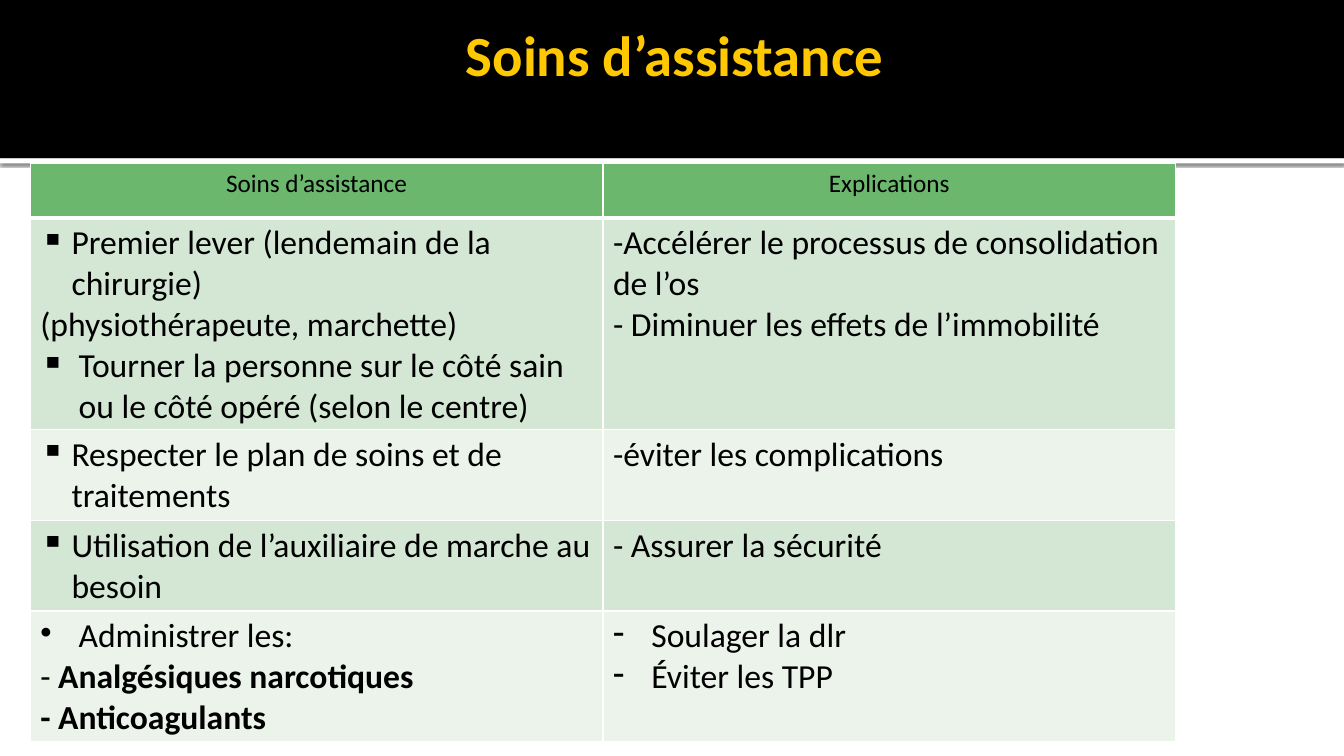
"""Build the slide "Soins d’assistance": a black title band above a care table."""
from lxml import etree
from pptx import Presentation
from pptx.dml.color import RGBColor
from pptx.enum.shapes import MSO_SHAPE
from pptx.enum.text import MSO_ANCHOR, PP_ALIGN
from pptx.oxml import parse_xml
from pptx.oxml.ns import qn
from pptx.util import Inches, Pt

RECTANGLE = MSO_SHAPE.RECTANGLE
TOP = MSO_ANCHOR.TOP
CENTER = PP_ALIGN.CENTER
NAMESPACE = 'xmlns:a="http://schemas.openxmlformats.org/drawingml/2006/main"'
SHADOW = (f'<a:effectLst {NAMESPACE}><a:outerShdw blurRad="31750" dist="10160" dir="5400000">'
          '<a:srgbClr val="000000"><a:alpha val="60000"/></a:srgbClr></a:outerShdw></a:effectLst>')
BAND_HEIGHT = 1.57
STRIP_HEIGHT = 0.05
TABLE_LEFT = 0.3
TABLE_HEIGHT = 5.74
COLUMN_WIDTH = 5.68
ROW_HEIGHTS = [0.54, 0.88, 0.79, 0.85, 0.51]
HEADER_FILL = "6BB76D"
BODY_FILLS = ["D4E6D4", "EBF3EB"]


def color(value):
    """Turn a hex string into a colour."""
    return RGBColor.from_string(value)


def add_run(paragraph, text, size, value, bold=False):
    """Append one styled run."""
    run = paragraph.add_run()
    run.text = text
    run.font.name = "Calibri"
    run.font.size = Pt(size)
    run.font.bold = bold
    run.font.color.rgb = color(value)


presentation = Presentation()
presentation.slide_width = Inches(13.33)
presentation.slide_height = Inches(7.5)
slide = presentation.slides.add_slide(presentation.slide_layouts[6])

for top, height, fill in [(BAND_HEIGHT, STRIP_HEIGHT, "FFFFFF"), (0, BAND_HEIGHT, "000000")]:
    band = slide.shapes.add_shape(RECTANGLE, 0, Inches(top), presentation.slide_width, Inches(height))
    band.shadow.inherit = False
    band.fill.solid()
    band.fill.fore_color.rgb = color(fill)
    band.line.fill.background()
    if top:
        properties = band._element.spPr
        properties.replace(properties.find(qn("a:effectLst")), parse_xml(SHADOW))

title = slide.shapes.add_textbox(Inches(0.67), Inches(0.17), Inches(12), Inches(1.37))
frame = title.text_frame
frame.word_wrap = True
frame.vertical_anchor = TOP
frame.margin_left = Inches(0.1)
frame.margin_right = Inches(0.05)
frame.margin_top = Inches(0.03)
frame.paragraphs[0].alignment = CENTER
add_run(frame.paragraphs[0], "Soins d’assistance", 40.5, "FFC800", True)

rows = [
    [[("", 0, [("Soins d’assistance", False)])],
     [("", 0, [("Explications", False)])]],
    [[("▪", 0.31, [("Premier lever (lendemain de la chirurgie)", False)]),
      ("", 0, [("(physiothérapeute, marchette)", False)]),
      ("▪", 0.38, [("Tourner la personne sur le côté sain ou le côté opéré (selon le centre)", False)])],
     [("", 0, [("-Accélérer le processus de consolidation de l’os", False)]),
      ("", 0, [("- Diminuer les effets de l’immobilité", False)])]],
    [[("▪", 0.31, [("Respecter le plan de soins et de traitements", False)])],
     [("", 0, [("-éviter les complications", False)])]],
    [[("▪", 0.31, [("Utilisation de l’auxiliaire de marche au besoin", False)])],
     [("", 0, [("- Assurer la sécurité", False)])]],
    [[("•", 0.38, [("Administrer les:", False)]),
      ("", 0, [("- ", False), ("Analgésiques narcotiques", True)]),
      ("", 0, [("- Anticoagulants", True)])],
     [("-", 0.38, [("Soulager la dlr", False)]),
      ("-", 0.38, [("Éviter les TPP", False)])]],
]

table_shape = slide.shapes.add_table(
    len(rows), 2, Inches(TABLE_LEFT), Inches(BAND_HEIGHT + STRIP_HEIGHT),
    Inches(2 * COLUMN_WIDTH), Inches(TABLE_HEIGHT))
table = table_shape.table
for column in table.columns:
    column.width = Inches(COLUMN_WIDTH)

for row_index, (row, height) in enumerate(zip(rows, ROW_HEIGHTS)):
    table.rows[row_index].height = Inches(height)
    header = row_index == 0
    for column_index, paragraphs in enumerate(row):
        cell = table.cell(row_index, column_index)
        cell_properties = cell._tc.get_or_add_tcPr()
        for side in "LRTB":
            width = 3 if header and side == "B" else 1
            cell_properties.append(parse_xml(
                f'<a:ln{side} {NAMESPACE} w="{Pt(width)}"><a:solidFill>'
                f'<a:srgbClr val="FFFFFF"/></a:solidFill></a:ln{side}>'))
        cell.fill.solid()
        cell.fill.fore_color.rgb = color(HEADER_FILL if header else BODY_FILLS[(row_index - 1) % 2])
        for position, (bullet, indent, runs) in enumerate(paragraphs):
            frame = cell.text_frame
            paragraph = frame.add_paragraph() if position else frame.paragraphs[0]
            if header:
                paragraph.alignment = CENTER
            if bullet:
                paragraph_properties = paragraph._p.get_or_add_pPr()
                paragraph_properties.set("marL", str(Inches(indent)))
                paragraph_properties.set("indent", str(-Inches(indent)))
                etree.SubElement(paragraph_properties, qn("a:buChar")).set("char", bullet)
            for text, bold in runs:
                add_run(paragraph, text, 18 if header else 24, "000000", bold)
table_shape.height = Inches(TABLE_HEIGHT)

presentation.save("out.pptx")
